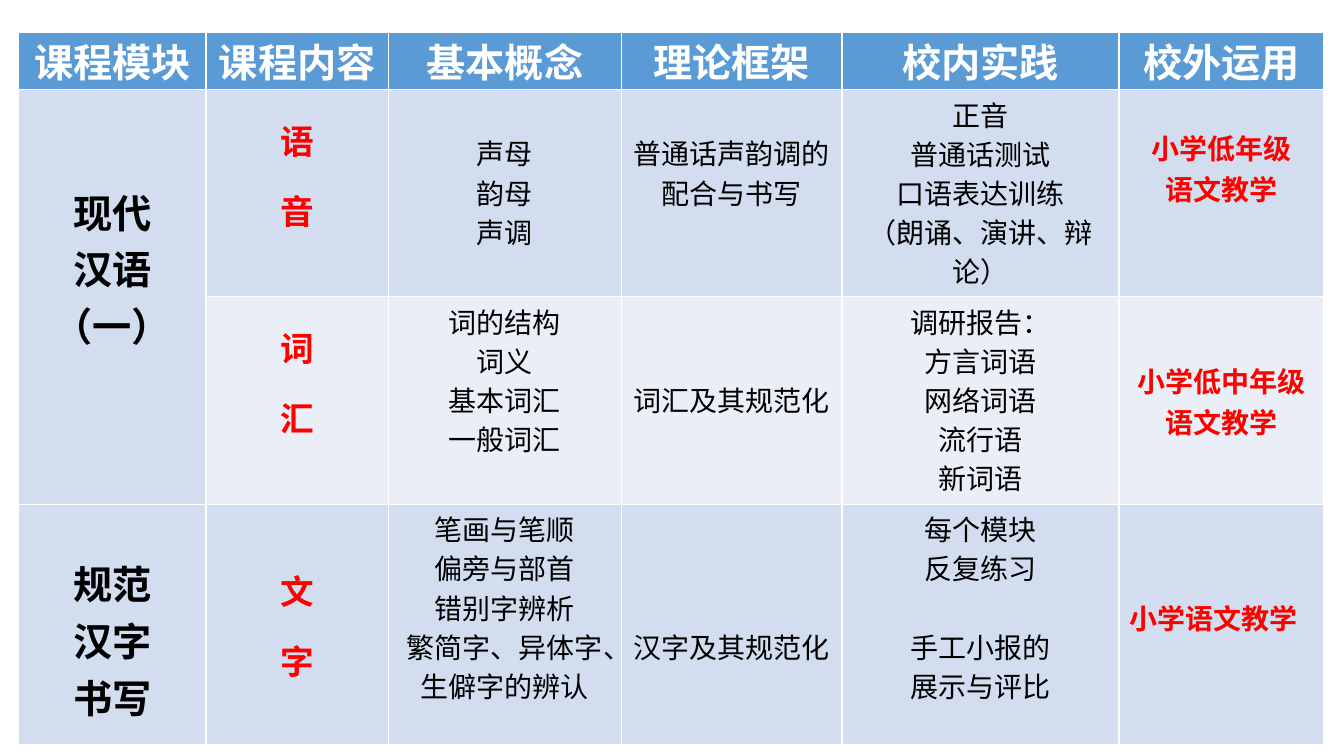
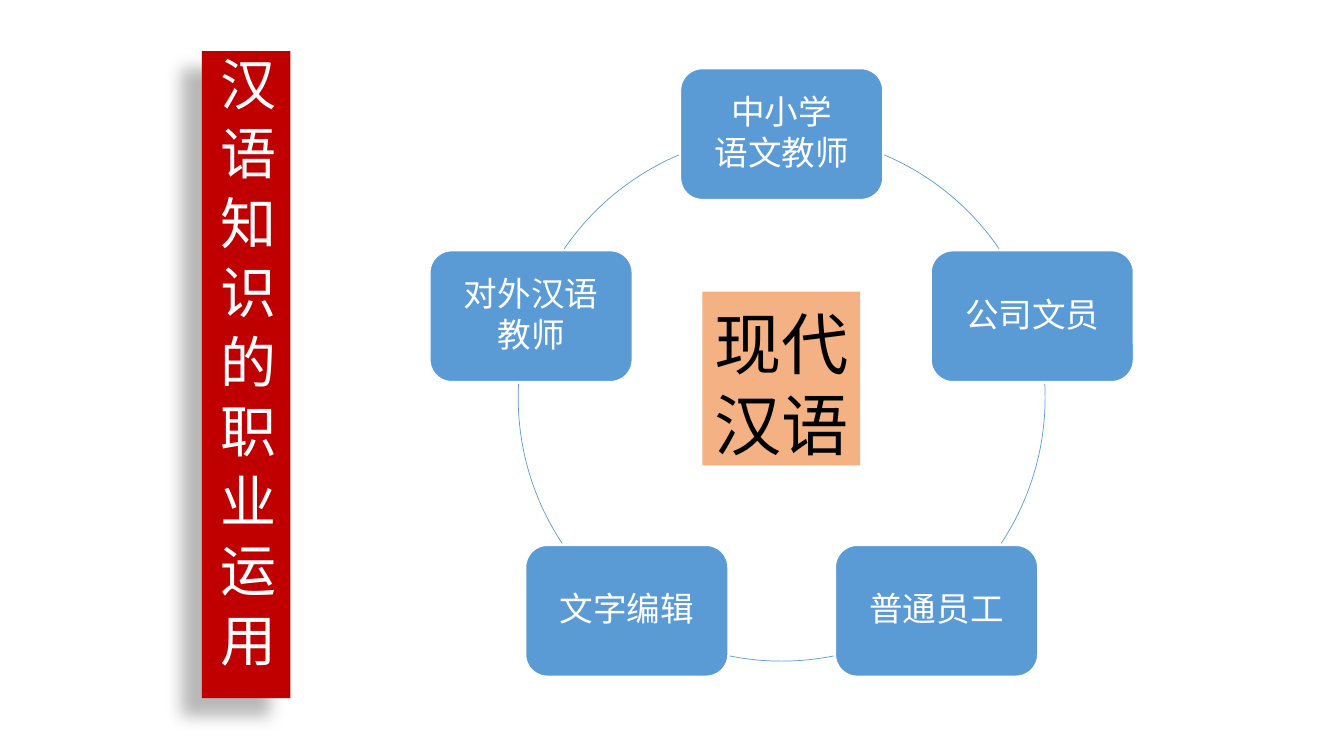
"""Builds a course table slide and a career cycle slide."""
from math import cos, radians, sin

from lxml.etree import SubElement
from pptx import Presentation
from pptx.dml.color import RGBColor
from pptx.enum.shapes import MSO_SHAPE as Shape
from pptx.enum.text import MSO_ANCHOR as Anchor, MSO_AUTO_SIZE as AutoSize, PP_ALIGN as Align
from pptx.oxml.ns import qn
from pptx.util import Cm, Pt

COLORS = {"blue": "5B9BD5", "band": "D2DEEF", "pale": "EAEFF7", "red": "FF0000",
          "banner": "C00000", "orange": "F4B183", "black": "000000", "white": "FFFFFF"}
FONT = "Arial"

HEADER_STYLE = dict(size=28, color="white", bold=True)
CONCEPT_STYLE = dict(size=20, leading=28)
COLUMNS = [
    ("课程模块", 4.72, dict(size=28, bold=True)),
    ("课程内容", 4.6, dict(size=24, color="red", bold=True, leading=25)),
    ("基本概念", 5.87, CONCEPT_STYLE),
    ("理论框架", 5.56, CONCEPT_STYLE),
    ("校内实践", 6.98, CONCEPT_STYLE),
    ("校外运用", 5.16, dict(size=20, color="red", bold=True)),
]
ROWS = [
    (5.22, "band", [(2.35, "现代\n汉语\n（一）"), (1, "语\n\n音"), (1.11, "声母\n韵母\n声调"),
                    (1.11, "普通话声韵调的配合与书写"),
                    (0.13, "正音\n普通话测试\n口语表达训练\n（朗诵、演讲、辩论）"),
                    (0.94, "小学低年级\n语文教学")]),
    (5.23, "pale", [None, (1, "词\n\n汇"), (0.13, "词的结构\n词义\n基本词汇\n一般词汇"),
                    (2.1, "词汇及其规范化"),
                    (0.13, "调研报告：\n方言词语\n网络词语\n流行语\n新词语"),
                    (1.59, "小学低中年级语文教学")]),
    (6.05, "band", [(1.26, "规范\n汉字\n书写"), (1.89, "文\n\n字"),
                    (0.13, "笔画与笔顺\n偏旁与部首\n错别字辨析\n繁简字、异体字、生僻字的辨认"),
                    (3.09, "汉字及其规范化"),
                    (0.13, "每个模块\n反复练习\n\n手工小报的\n展示与评比"),
                    (2.32, "小学语文教学", Align.LEFT)]),
]
JOBS = ["中小学\n语文教师", "公司文员", "普通员工", "文字编辑", "对外汉语\n教师"]
ARCS = [(292.9, 325.6), (357, 33.6), (78.6, 101.4), (146.4, 183), (214.4, 247.1)]


def rgb(name):
    return RGBColor.from_string(COLORS[name])


class Deck:
    """Holds the style and the current slide."""

    def __init__(self):
        self.prs = Presentation()
        self.prs.slide_width, self.prs.slide_height = Cm(33.87), Cm(19.05)
        self.s = None

    def slide(self, layout):
        self.s = self.prs.slides.add_slide(self.prs.slide_layouts[layout])

    def text(self, tf, content, size, color="black", bold=False, leading=None,
             align=Align.CENTER, after=0):
        """Set lines as paragraphs; an empty line becomes space before the next one."""
        tf.word_wrap = True
        gap, p = 0, None
        for line in content.split("\n"):
            if not line:
                gap += leading
                continue
            p = tf.add_paragraph() if p is not None else tf.paragraphs[0]
            p.text, p.alignment = line, align
            p.space_before, p.space_after = Pt(gap), Pt(after)
            p.line_spacing = Pt(leading) if leading and leading > 2 else leading
            p.font.name, p.font.size, p.font.bold = FONT, Pt(size), bold
            p.font.color.rgb = rgb(color)
            gap = 0

    def cell(self, cell, fill, content, top, **style):
        cell.fill.solid()
        cell.fill.fore_color.rgb = rgb(fill)
        cell.margin_top = Cm(top)
        self.text(cell.text_frame, content, **style)

    def table(self, x, y, columns, header_height, rows):
        width = sum(w for _, w, _ in columns)
        height = header_height + sum(h for h, _, _ in rows)
        tbl = self.s.shapes.add_table(len(rows) + 1, len(columns), Cm(x), Cm(y),
                                      Cm(width), Cm(height)).table
        tbl.rows[0].height = Cm(header_height)
        for j, (head, w, _) in enumerate(columns):
            tbl.columns[j].width = Cm(w)
            tbl.cell(0, j).margin_bottom = 0
            self.cell(tbl.cell(0, j), "blue", head, 0, **HEADER_STYLE)
        for i, (h, fill, entries) in enumerate(rows, 1):
            tbl.rows[i].height = Cm(h)
            for j, entry in enumerate(entries):
                if entry is None:
                    tbl.cell(i - 1, j).merge(tbl.cell(i, j))
                    continue
                top, content, *align = entry
                style = dict(columns[j][2], align=align[0] if align else Align.CENTER)
                self.cell(tbl.cell(i, j), fill, content, top, **style)

    def box(self, kind, x, y, w, h, fill, content, line=None, **style):
        sp = self.s.shapes.add_shape(kind, Cm(x), Cm(y), Cm(w), Cm(h))
        sp.shadow.inherit = False
        sp.fill.solid()
        sp.fill.fore_color.rgb = rgb(fill)
        if line:
            sp.line.color.rgb, sp.line.width = rgb(line), Pt(1)
        else:
            sp.line.fill.background()
        self.text(sp.text_frame, content, **style)
        return sp

    def arc(self, cx, cy, radius, start, end):
        sp = self.s.shapes.add_shape(Shape.ARC, Cm(cx - radius), Cm(cy - radius),
                                     Cm(2 * radius), Cm(2 * radius))
        sp.adjustments[0], sp.adjustments[1] = start * 0.6, end * 0.6
        sp.shadow.inherit = False
        sp.fill.background()
        sp.line.color.rgb, sp.line.width = rgb("blue"), Pt(0.5)

    def cycle(self, cx, cy, radius, labels, arcs):
        for start, end in arcs:
            self.arc(cx, cy, radius, start, end)
        w, h = 5.1, 3.3
        for i, label in enumerate(labels):
            angle = radians(360 / len(labels) * i - 90)
            self.box(Shape.ROUNDED_RECTANGLE, cx + radius * cos(angle) - w / 2,
                     cy + radius * sin(angle) - h / 2, w, h, "blue", label, line="white",
                     size=24, color="white", leading=0.9, after=3)

    def banner(self, x, y, w, h, content):
        sp = self.s.shapes.title
        sp.left, sp.top, sp.width, sp.height = Cm(x), Cm(y), Cm(w), Cm(h)
        sp.fill.solid()
        sp.fill.fore_color.rgb = rgb("banner")
        tf = sp.text_frame
        self.text(tf, content, size=40, color="white", align=Align.LEFT)
        tf.auto_size, tf.vertical_anchor = AutoSize.NONE, Anchor.TOP
        tf._txBody.bodyPr.set("vert", "eaVert")
        effects = SubElement(sp._element.spPr, qn("a:effectLst"))
        shadow = SubElement(effects, qn("a:outerShdw"), blurRad=str(Pt(11.8)),
                            dist=str(Pt(19.7)), dir=str(141 * 60000), rotWithShape="0")
        color = SubElement(shadow, qn("a:srgbClr"), val=COLORS["black"])
        SubElement(color, qn("a:alpha"), val="28000")


def main():
    deck = Deck()
    deck.slide(6)
    deck.table(0.47, 0.82, COLUMNS, 1.44, ROWS)

    deck.slide(5)
    deck.cycle(19.7, 10.02, 6.64, JOBS, ARCS)
    core = deck.box(Shape.RECTANGLE, 17.7, 7.35, 3.98, 4.38, "orange", "现代\n汉语",
                    size=48, leading=58)
    core.text_frame.vertical_anchor = Anchor.TOP
    core.text_frame.margin_top = Cm(0.25)
    deck.banner(5.09, 1.29, 2.23, 16.3, "汉 语 知 识 的 职 业 运 用")
    deck.prs.save("out.pptx")


if __name__ == "__main__":
    main()
